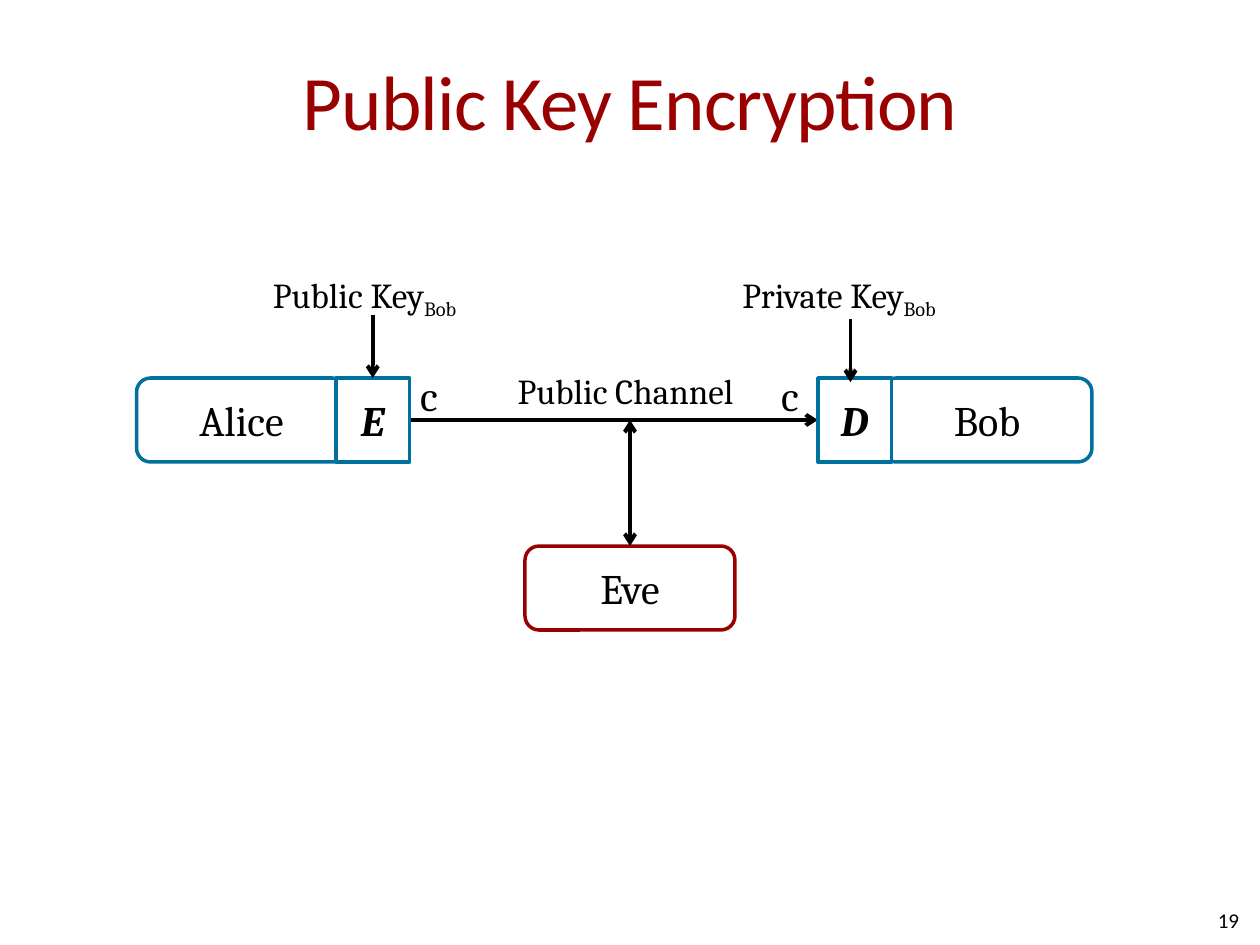
"""Build a slide that explains public key encryption between Alice and Bob."""
import dataclasses

import pptx
import pptx.dml.color
import pptx.enum.shapes
import pptx.enum.text
import pptx.oxml.ns
import pptx.oxml.xmlchemy
import pptx.util

SHAPE = pptx.enum.shapes.MSO_SHAPE
ALIGN = pptx.enum.text.PP_ALIGN
ANCHOR = pptx.enum.text.MSO_ANCHOR
FIT = pptx.enum.text.MSO_AUTO_SIZE
CELL = pptx.util.Inches(1) / 12
BOX_COLS, KEY_COLS, BOX_ROWS = 20, 7, 8
BOX_TOP, CHANNEL_ROW, EVE_TOP = 36, 40, 52


@dataclasses.dataclass(frozen=True)
class Theme:
    """Colours, fonts and sizes of the slide."""
    ink: str = "000000"
    paper: str = "FFFFFF"
    friend: str = "00709E"
    accent: str = "990000"
    heading_font: str = "Calibri"
    body_font: str = "Cambria"
    title_size: float = 44
    name_size: float = 24
    label_size: float = 20
    number_size: float = 12
    outline: float = 2
    arrow: float = 2.25


THEME = Theme()


def rgb(value):
    """Return the colour for a hex value."""
    return pptx.dml.color.RGBColor.from_string(value)


def grid(*cells):
    """Turn columns and rows into slide lengths."""
    return [pptx.util.Emu(round(cell * CELL)) for cell in cells]


def apply(target, values):
    """Set each named value on the target."""
    for name, value in values.items():
        setattr(target, name, value)


def style_frame(frame, **values):
    """Clear the margins of a text frame and set its format."""
    margins = dict.fromkeys(
        ("margin_left", "margin_top", "margin_right", "margin_bottom"), 0)
    apply(frame, margins | values)


def write(para, text, size, font=THEME.body_font, color=THEME.ink, extra=None, **values):
    """Add a formatted span, with extra XML attributes if given."""
    span = para.add_run()
    span.text = text
    apply(span.font, {"size": pptx.util.Pt(size), "name": font} | values)
    span.font.color.rgb = rgb(color)
    for name, value in (extra or {}).items():
        span.font._element.set(name, value)


def add_title(page, text):
    """Fill and place the title placeholder."""
    title = page.shapes.title
    apply(title, dict(zip(("left", "top", "width", "height"), grid(6, 2, 108, 15))))
    style_frame(title.text_frame, vertical_anchor=ANCHOR.MIDDLE, word_wrap=True,
                margin_top=pptx.util.Inches(0.05),
                margin_bottom=pptx.util.Inches(0.05))
    para = title.text_frame.paragraphs[0]
    para.alignment = ALIGN.CENTER
    write(para, text, THEME.title_size, THEME.heading_font, THEME.accent,
          {"spc": "-50"})


def add_box(page, text, col, row, cols=BOX_COLS, color=THEME.friend,
            kind=SHAPE.ROUNDED_RECTANGLE, **values):
    """Add an outlined box with centred text."""
    box = page.shapes.add_shape(kind, *grid(col, row, cols, BOX_ROWS))
    box.shadow.inherit = False
    box.fill.solid()
    box.fill.fore_color.rgb = rgb(THEME.paper)
    box.line.color.rgb = rgb(color)
    box.line.width = pptx.util.Pt(THEME.outline)
    style_frame(box.text_frame, vertical_anchor=ANCHOR.MIDDLE, word_wrap=True)
    para = box.text_frame.paragraphs[0]
    para.alignment = ALIGN.CENTER
    write(para, text, THEME.name_size, **values)


def add_label(page, text, col, row, cols, size=THEME.label_size, subscript=None):
    """Add a one-line label that may end in a subscript."""
    box = page.shapes.add_textbox(*grid(col, row, cols, size / 5))
    style_frame(box.text_frame, word_wrap=False, auto_size=FIT.SHAPE_TO_FIT_TEXT)
    para = box.text_frame.paragraphs[0]
    write(para, text, size)
    if subscript:
        write(para, subscript, size, extra={"baseline": "-25000"})


def add_arrow(page, start, end, ends=("tailEnd",)):
    """Add a straight arrow between two grid points."""
    arrow = page.shapes.add_connector(
        pptx.enum.shapes.MSO_CONNECTOR.STRAIGHT, *grid(*start, *end))
    arrow.line.color.rgb = rgb(THEME.ink)
    arrow.line.width = pptx.util.Pt(THEME.arrow)
    properties = arrow._element.spPr
    outline = properties.find(pptx.oxml.ns.qn("a:ln"))
    for name in ends:
        head = pptx.oxml.xmlchemy.OxmlElement(f"a:{name}")
        head.set("type", "arrow")
        outline.append(head)
    properties.append(pptx.oxml.xmlchemy.OxmlElement("a:effectLst"))


def add_page_number(page, text):
    """Add the page number at the bottom right."""
    box = page.shapes.add_textbox(*grid(90, 85.2, 28, 4.8))
    style_frame(box.text_frame, vertical_anchor=ANCHOR.MIDDLE, word_wrap=True)
    para = box.text_frame.paragraphs[0]
    para.alignment = ALIGN.RIGHT
    write(para, text, THEME.number_size, THEME.heading_font)


def main():
    """Build and save the slide."""
    deck = pptx.Presentation()
    deck.slide_width, deck.slide_height = grid(120, 90)
    page = deck.slides.add_slide(deck.slide_layouts.get_by_name("Title Only"))
    add_title(page, "Public Key Encryption")
    add_page_number(page, "19")

    encrypt, decrypt = 32, 77.9
    add_box(page, "Alice", 13, BOX_TOP)
    add_box(page, "Bob", 84, BOX_TOP)
    add_arrow(page, (encrypt + KEY_COLS, CHANNEL_ROW), (decrypt, CHANNEL_ROW))
    add_label(page, "Public Channel", 49.3, 35.2, 21.4)
    add_box(page, "Eve", 50, EVE_TOP, color=THEME.accent)
    add_arrow(page, (60, EVE_TOP), (60, CHANNEL_ROW), ("headEnd", "tailEnd"))

    for text, col in (("E", encrypt), ("D", decrypt)):
        add_box(page, text, col, BOX_TOP, KEY_COLS, kind=SHAPE.RECTANGLE,
                bold=True, italic=True)
    for col in (40, 74.4):
        add_label(page, "c", col, 35.2, 1.8, THEME.name_size)
    for text, col, cols, arrow_col, arrow_row in (
            ("Public Key", 26, 19, 35.5, 30),
            ("Private Key", 70.7, 20.4, 81, 30.4)):
        add_label(page, text, col, 26, cols, subscript="Bob")
        add_arrow(page, (arrow_col, arrow_row), (arrow_col, arrow_row + 6))

    deck.save("out.pptx")


if __name__ == "__main__":
    main()
